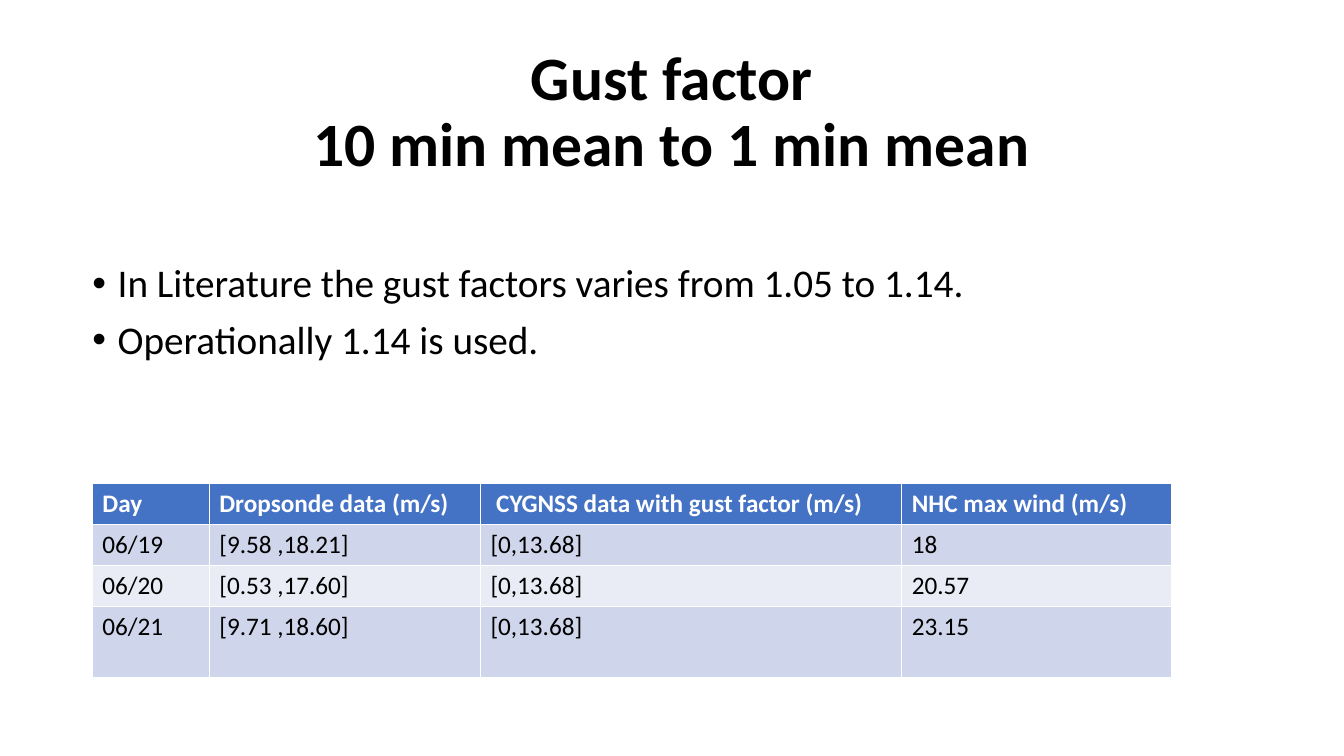
import pptx
import pptx.util
import pptx.dml.color
import pptx.enum.text
import pptx.oxml.ns
from lxml import etree

Pt = pptx.util.Pt
HUES = {"ink": "000000", "white": "FFFFFF", "head": "4472C4",
        "odd": "CFD5EA", "even": "E9EBF5"}


def tint(name):
    return pptx.dml.color.RGBColor.from_string(HUES[name])


def style(para, size, hue="ink", bold=False):
    for run in para.runs:
        run.font.name = "Calibri"
        run.font.size = Pt(size)
        run.font.bold = bold
        run.font.color.rgb = tint(hue)


deck = pptx.Presentation()
deck.slide_width, deck.slide_height = Pt(960), Pt(540)
slide = deck.slides.add_slide(deck.slide_layouts[6])

# Title
title = slide.shapes.add_textbox(Pt(66), Pt(28.8), Pt(828), Pt(104.4)).text_frame
title.word_wrap = True
title.vertical_anchor = pptx.enum.text.MSO_ANCHOR.MIDDLE
head = title.paragraphs[0]
head.text = "Gust factor\v10 min mean to 1 min mean"
head.alignment = pptx.enum.text.PP_ALIGN.CENTER
head.line_spacing = 0.9
style(head, 44, bold=True)

# Bullets
body = slide.shapes.add_textbox(Pt(59), Pt(185), Pt(828), Pt(137.5)).text_frame
body.word_wrap = True
body.text = ("In Literature the gust factors varies from 1.05 to 1.14.\n"
             "Operationally 1.14 is used.")
for para in body.paragraphs:
    para.line_spacing = 0.9
    para.space_before = Pt(10)
    style(para, 28)
    props = para._p.get_or_add_pPr()
    props.set("marL", str(Pt(18)))
    props.set("indent", str(-Pt(18)))
    font = etree.SubElement(props, pptx.oxml.ns.qn("a:buFont"))
    font.set("typeface", "Arial")
    dot = etree.SubElement(props, pptx.oxml.ns.qn("a:buChar"))
    dot.set("char", "•")

# Wind table
rows = [
    ["Day", "Dropsonde data (m/s)", " CYGNSS data with gust factor (m/s)",
     "NHC max wind (m/s)"],
    ["06/19", "[9.58 ,18.21]", "[0,13.68]", "18"],
    ["06/20", "[0.53 ,17.60]", "[0,13.68]", "20.57"],
    ["06/21", "[9.71 ,18.60]", "[0,13.68]", "23.15"],
]
wides = [83.5, 193.7, 301, 193]
highs = [29.2, 29.2, 29.2, 50.6]
fills = ["head", "odd", "even", "odd"]
table = slide.shapes.add_table(len(rows), len(wides), Pt(66), Pt(345.6),
                               Pt(sum(wides)), Pt(sum(highs))).table
for col, wide in zip(table.columns, wides):
    col.width = Pt(wide)
for r, (row, high, fill) in enumerate(zip(rows, highs, fills)):
    table.rows[r].height = Pt(high)
    for c, text in enumerate(row):
        cell = table.cell(r, c)
        cell.fill.solid()
        cell.fill.fore_color.rgb = tint(fill)
        cell.text_frame.text = text
        style(cell.text_frame.paragraphs[0], 18,
              "ink" if r else "white", bold=r == 0)

deck.save("out.pptx")
